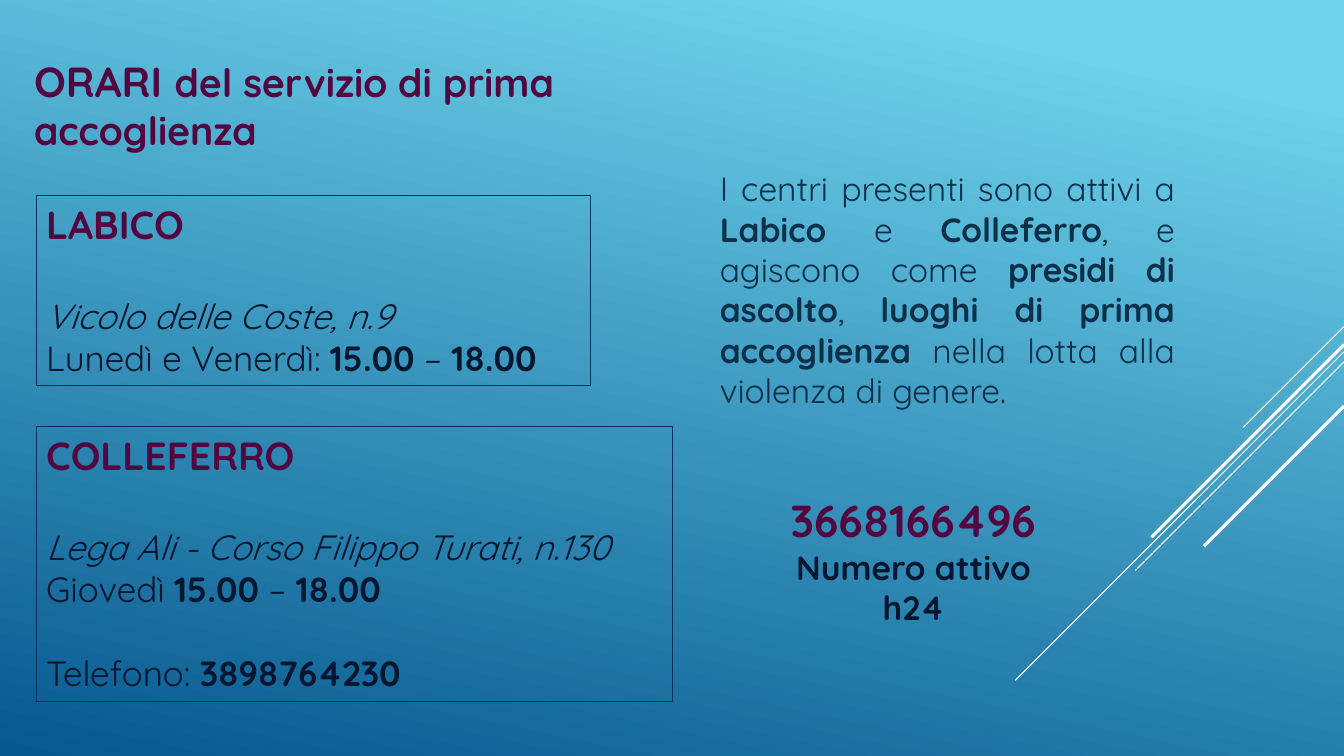
"""Build the slide with the opening hours of the first-reception service."""
import pptx
import pptx.util
import pptx.dml.color
import pptx.enum.shapes
import pptx.enum.text
import pptx.oxml.ns
import lxml.etree

W, H = 13.33, 7.5
FONT = "Quicksand"
COLORS = {"sky": "6ED2EB", "sea": "06588E", "white": "FFFFFF", "frame": "052F61",
          "plum": "520741", "navy": "031730", "teal": "0A304A"}

RAYS = [(3.24, 1.0, 0.75), (3.49, 3.26, 0.75), (3.59, 2.07, 0.75),
        (3.42, 1.91, 2.25), (4.03, 1.39, 2.25)]

HOURS = [("15.00", "b"), (" – ", ""), ("18.00", "b")]

BLOCKS = [
    {"at": (0.36, 1.94, 5.5, 1.88), "framed": True, "wrap": False, "paras": [
        {"size": 28, "color": "plum", "runs": [("LABICO", "b")]},
        {"size": 25, "color": "navy", "before": 33.6,
         "runs": [("Vicolo delle Coste, n.9", "i")]},
        {"size": 25, "color": "navy", "runs": [("Lunedì e Venerdì: ", "")] + HOURS}]},
    {"at": (0.24, 0.47, 6.0, 1.11), "paras": [
        {"color": "plum", "runs": [("ORARI", "b", 30), (" ", "b", 32),
                                   ("del servizio di prima accoglienza", "b", 28)]}]},
    {"at": (0.36, 4.23, 6.31, 2.73), "framed": True, "paras": [
        {"size": 28, "color": "plum", "runs": [("COLLEFERRO", "b")]},
        {"size": 25, "color": "navy", "before": 33.6,
         "runs": [("Lega Ali - Corso Filippo Turati, n.130", "i")]},
        {"size": 25, "color": "navy", "runs": [("Giovedì ", "")] + HOURS},
        {"size": 25, "color": "navy", "before": 30,
         "runs": [("Telefono: ", ""), ("3898764230", "b")]}]},
    {"at": (7.04, 1.62, 4.71, 2.52), "paras": [
        {"size": 24, "color": "teal", "align": "JUSTIFY", "runs": [
            ("I centri presenti sono attivi a ", ""), ("Labico", "b"), (" e ", ""),
            ("Colleferro", "b"), (", e agiscono come ", ""),
            ("presidi di ascolto", "b"), (", ", ""),
            ("luoghi di prima accoglienza ", "b"),
            ("nella lotta alla violenza di genere.", "")]}]},
    {"at": (7.61, 4.84, 2.9, 1.45), "paras": [
        {"size": 32, "color": "plum", "align": "CENTER", "runs": [("3668166496", "b")]},
        {"size": 24, "color": "navy", "align": "CENTER",
         "runs": [("Numero attivo h24", "b")]}]},
]


def rgb(name):
    return pptx.dml.color.RGBColor.from_string(COLORS[name])


def paint_background(s):
    fill = s.background.fill
    fill.gradient()
    fill.gradient_angle = 258
    for stop, (name, position) in zip(fill.gradient_stops, [("sky", 0.1), ("sea", 1)]):
        stop.color.rgb = rgb(name)
        stop.position = position


def add_ray(s, top, run, width):
    ends = [pptx.util.Inches(v) for v in (W, top, W - run, top + run)]
    line = s.shapes.add_connector(pptx.enum.shapes.MSO_CONNECTOR.STRAIGHT, *ends)
    line.line.color.rgb = rgb("white")
    line.line.width = pptx.util.Pt(width)
    lxml.etree.SubElement(line._element.spPr, pptx.oxml.ns.qn("a:effectLst"))


def write_paragraph(p, para):
    p.font.name = FONT
    p.font.color.rgb = rgb(para["color"])
    if "size" in para:
        p.font.size = pptx.util.Pt(para["size"])
    p.alignment = getattr(pptx.enum.text.PP_ALIGN, para.get("align", "LEFT"))
    p.space_before = pptx.util.Pt(para.get("before", 0))
    for text, style, *size in para["runs"]:
        r = p.add_run()
        r.text = text
        r.font.bold = style == "b"
        r.font.italic = style == "i"
        if size:
            r.font.size = pptx.util.Pt(size[0])


def add_block(s, block):
    box = [pptx.util.Inches(v) for v in block["at"]]
    if block.get("framed"):
        sp = s.shapes.add_shape(pptx.enum.shapes.MSO_SHAPE.RECTANGLE, *box)
        sp.shadow.inherit = False
        sp.fill.background()
        sp.line.color.rgb = rgb("frame")
        sp.line.width = pptx.util.Pt(0.75)
    else:
        sp = s.shapes.add_textbox(*box)
    tf = sp.text_frame
    tf.word_wrap = block.get("wrap", True)
    tf.auto_size = pptx.enum.text.MSO_AUTO_SIZE.SHAPE_TO_FIT_TEXT
    tf.vertical_anchor = pptx.enum.text.MSO_ANCHOR.TOP
    for i, para in enumerate(block["paras"]):
        write_paragraph(tf.add_paragraph() if i else tf.paragraphs[0], para)


def main():
    prs = pptx.Presentation()
    prs.slide_width, prs.slide_height = pptx.util.Inches(W), pptx.util.Inches(H)
    s = prs.slides.add_slide(prs.slide_layouts[6])
    paint_background(s)
    for ray in RAYS:
        add_ray(s, *ray)
    for block in BLOCKS:
        add_block(s, block)
    prs.save("out.pptx")


if __name__ == "__main__":
    main()
